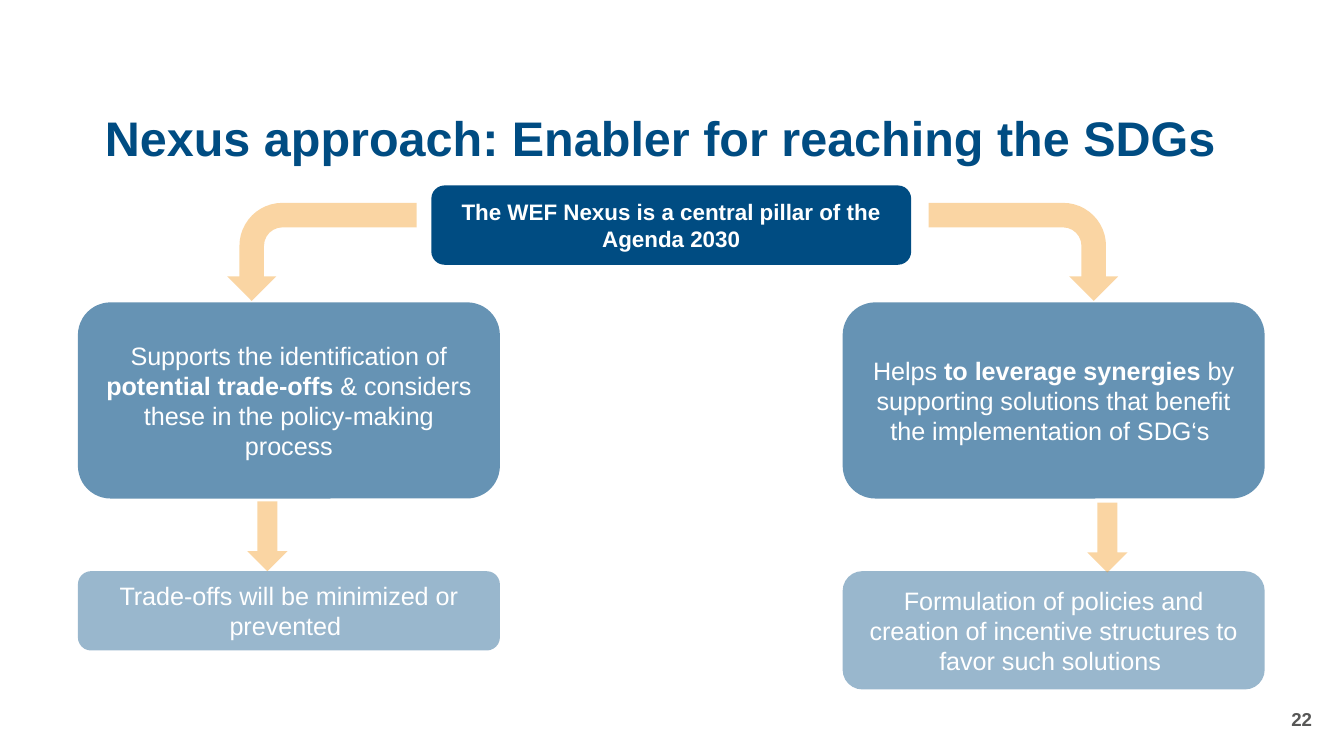
"""Build the slide on the Nexus approach as an enabler for the SDGs."""
from lxml import etree
from pptx import Presentation
from pptx.dml.color import RGBColor
from pptx.enum.shapes import MSO_SHAPE
from pptx.enum.text import MSO_ANCHOR, PP_ALIGN
from pptx.oxml.ns import qn
from pptx.util import Inches, Pt

ROUND_RECT = MSO_SHAPE.ROUNDED_RECTANGLE
BENT_ARROW = MSO_SHAPE.BENT_ARROW
DOWN_ARROW = MSO_SHAPE.DOWN_ARROW
LEFT, CENTER, RIGHT = PP_ALIGN.LEFT, PP_ALIGN.CENTER, PP_ALIGN.RIGHT
MIDDLE = MSO_ANCHOR.MIDDLE

COLORS = {"blue": "004C82", "orange": "F4971A", "white": "FFFFFF", "gray": "575756"}
FONT = "Arial"
BOX_WIDTH = 3.14
EFFECT_TOP, EFFECT_HEIGHT = 2.25, 1.46
RESULT_TOP = 4.25


def write(sp, runs, size, color, align):
    """Fill a shape with one paragraph of (text, bold) runs."""
    tf = sp.text_frame
    tf.word_wrap = True
    tf.vertical_anchor = MIDDLE
    p = tf.paragraphs[0]
    p.alignment = align
    for text, bold in runs:
        r = p.add_run()
        r.text = text
        r.font.name = FONT
        r.font.size = Pt(size)
        r.font.bold = bold
        r.font.color.rgb = RGBColor.from_string(COLORS[color])
    return p


def add_shape(s, kind, left, top, width, height, color, opacity=100):
    """Add a borderless preset shape with an opacity in percent."""
    sp = s.shapes.add_shape(
        kind, Inches(left), Inches(top), Inches(width), Inches(height))
    sp.shadow.inherit = False
    sp.line.fill.background()
    sp.fill.solid()
    sp.fill.fore_color.rgb = RGBColor.from_string(COLORS[color])
    if opacity < 100:
        clr = sp._element.spPr.find(qn("a:solidFill")).find(qn("a:srgbClr"))
        etree.SubElement(clr, qn("a:alpha")).set("val", str(opacity * 1000))
    return sp


def add_box(s, left, top, width, height, runs, size=13.5, opacity=100):
    """Add a rounded blue box with centred white text."""
    sp = add_shape(s, ROUND_RECT, left, top, width, height, "blue", opacity)
    write(sp, runs, size, "white", CENTER)


def add_bent_arrow(s, left, rotation, mirrored=False):
    """Add an arrow that leads from the pillar box down to a column."""
    sp = add_shape(s, BENT_ARROW, left, 1.17, 0.73, 1.41, "orange", 40)
    sp.rotation = rotation
    if mirrored:
        sp._element.spPr.find(qn("a:xfrm")).set("flipH", "1")


def add_column(s, left, arrow_left, arrow_top, effect, result, result_height):
    """Add an effect box, its down arrow and the result box."""
    add_box(s, left, EFFECT_TOP, BOX_WIDTH, EFFECT_HEIGHT, effect, opacity=60)
    add_box(s, left, RESULT_TOP, BOX_WIDTH, result_height,
            [(result, False)], opacity=40)
    add_shape(s, DOWN_ARROW, arrow_left, arrow_top, 0.3, 0.52, "orange", 40)


def add_title(s, text):
    """Place and format the title placeholder."""
    sp = s.shapes.title
    sp.left, sp.top = Inches(0.58), Inches(0.75)
    sp.width, sp.height = Inches(9.37), Inches(0.59)
    sp.text_frame.margin_left = Inches(0.2)
    p = write(sp, [(text, True)], 26, "blue", LEFT)
    p.line_spacing = 0.9


def add_page_number(s, number):
    """Add the page number at the bottom right."""
    sp = s.shapes.add_textbox(Inches(7.61), Inches(5.2), Inches(2.25), Inches(0.3))
    write(sp, [(number, True)], 10, "gray", RIGHT)


def main():
    """Build and save the presentation."""
    prs = Presentation()
    prs.slide_width = Inches(10)
    prs.slide_height = prs.slide_width * 9 // 16
    s = prs.slides.add_slide(prs.slide_layouts[5])
    add_title(s, "Nexus approach: Enabler for reaching the SDGs")
    add_page_number(s, "22")
    add_box(s, 3.21, 1.38, 3.57, 0.59,
            [("The WEF Nexus is a central pillar of the Agenda 2030", True)], size=12)
    add_column(
        s, 0.58, 1.84, 3.73,
        [("Supports the identification of ", False),
         ("potential trade-offs ", True),
         ("& considers these in the policy-making process", False)],
        "Trade-offs will be minimized or prevented ", 0.59)
    add_column(
        s, 6.27, 8.09, 3.74,
        [("Helps ", False),
         ("to leverage synergies ", True),
         ("by supporting solutions that benefit the implementation of SDG‘s ", False)],
        "Formulation of policies and creation of incentive structures "
        "to favor such solutions ", 0.88)
    add_bent_arrow(s, 2.03, 270, mirrored=True)
    add_bent_arrow(s, 7.25, 90)
    prs.save("out.pptx")


if __name__ == "__main__":
    main()
